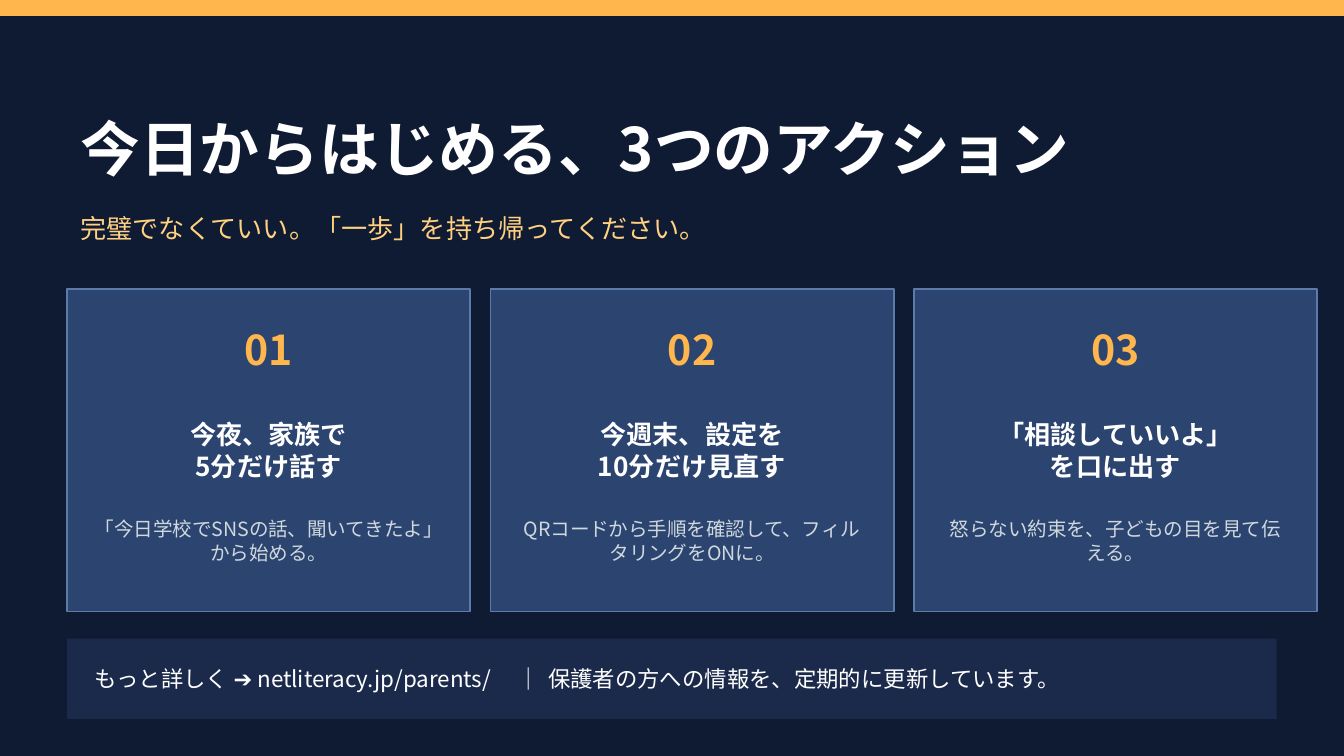
from dataclasses import dataclass

import pptx
import pptx.dml.color
import pptx.enum.shapes
import pptx.enum.text
import pptx.oxml.ns
import pptx.shapes.autoshape
import pptx.slide
import pptx.util
from lxml import etree

Cm = pptx.util.Cm
ALIGN = pptx.enum.text.PP_ALIGN
ANCHOR = pptx.enum.text.MSO_ANCHOR

FONT = "Noto Sans CJK JP"
COLORS = {
    "background": "0F1A33",
    "accent": "FFB74D",
    "subtitle": "FFD180",
    "card": "2C4470",
    "card_line": "5C7AAA",
    "detail": "CFD8DC",
    "footer": "1B2A4A",
    "white": "FFFFFF",
}
SLIDE_W, SLIDE_H = 25.4, 14.29
MARGIN = 1.27
CARD_W, CARD_H, CARD_TOP = 7.62, 6.1, 5.46
CARD_STEP = 8
CARD_PADDING = 0.51
FOOTER_TOP, FOOTER_W, FOOTER_H = 12.07, 22.86, 1.52


@dataclass(frozen=True)
class Box:
    """Position and size in centimetres."""
    left: float
    top: float
    width: float
    height: float

    def lengths(self) -> tuple[pptx.util.Length, ...]:
        return tuple(Cm(v) for v in (self.left, self.top, self.width, self.height))


@dataclass(frozen=True)
class Style:
    size: float
    color: str
    bold: bool = False
    align: ALIGN = ALIGN.LEFT
    anchor: ANCHOR = ANCHOR.MIDDLE


@dataclass(frozen=True)
class Action:
    number: str
    heading: str
    detail: str


TITLE = Style(32, "white", bold=True)
SUBTITLE = Style(14, "subtitle")
NUMBER = Style(22, "accent", bold=True, align=ALIGN.CENTER)
HEADING = Style(14, "white", bold=True, align=ALIGN.CENTER)
DETAIL = Style(10.5, "detail", align=ALIGN.CENTER, anchor=ANCHOR.TOP)
FOOTER = Style(12, "white")

ACTIONS = [
    Action("01", "今夜、家族で\n5分だけ話す", "「今日学校でSNSの話、聞いてきたよ」から始める。"),
    Action("02", "今週末、設定を\n10分だけ見直す", "QRコードから手順を確認して、フィルタリングをONに。"),
    Action("03", "「相談していいよ」\nを口に出す", "怒らない約束を、子どもの目を見て伝える。"),
]


def rgb(name: str) -> pptx.dml.color.RGBColor:
    return pptx.dml.color.RGBColor.from_string(COLORS[name])


def add_tab_stops(p, stops: tuple[float, ...]) -> None:
    tabs = etree.SubElement(p._p.get_or_add_pPr(), pptx.oxml.ns.qn("a:tabLst"))
    for stop in stops:
        etree.SubElement(tabs, pptx.oxml.ns.qn("a:tab"), pos=str(int(Cm(stop))), algn="l")


def write(s: pptx.shapes.autoshape.Shape, text: str, style: Style,
          stops: tuple[float, ...] = ()) -> None:
    tf = s.text_frame
    tf.text = text
    tf.word_wrap = True
    tf.auto_size = pptx.enum.text.MSO_AUTO_SIZE.NONE
    tf.vertical_anchor = style.anchor
    tf.margin_left = tf.margin_top = tf.margin_right = tf.margin_bottom = 0
    for p in tf.paragraphs:
        p.alignment = style.align
        if stops:
            add_tab_stops(p, stops)
        for r in p.runs:
            r.font.name = FONT
            r.font.size = pptx.util.Pt(style.size)
            r.font.bold = style.bold
            r.font.color.rgb = rgb(style.color)
            etree.SubElement(r._r.get_or_add_rPr(), pptx.oxml.ns.qn("a:ea"), typeface=FONT)


def add_text(slide: pptx.slide.Slide, box: Box, text: str, style: Style,
             stops: tuple[float, ...] = ()) -> None:
    write(slide.shapes.add_textbox(*box.lengths()), text, style, stops)


def add_panel(slide: pptx.slide.Slide, box: Box, fill: str, line: str | None = None) -> None:
    s = slide.shapes.add_shape(pptx.enum.shapes.MSO_SHAPE.RECTANGLE, *box.lengths())
    s.shadow.inherit = False
    s.fill.solid()
    s.fill.fore_color.rgb = rgb(fill)
    if line:
        s.line.color.rgb = rgb(line)
        s.line.width = pptx.util.Pt(1)
    else:
        s.line.fill.background()


def add_card(slide: pptx.slide.Slide, left: float, action: Action) -> None:
    inner_left, inner_width = left + CARD_PADDING, CARD_W - 2 * CARD_PADDING
    add_panel(slide, Box(left, CARD_TOP, CARD_W, CARD_H), "card", "card_line")
    add_text(slide, Box(left, 5.97, CARD_W, 1.27), action.number, NUMBER)
    add_text(slide, Box(inner_left, 7.49, inner_width, 2.03), action.heading, HEADING)
    add_text(slide, Box(inner_left, 9.78, inner_width, 1.52), action.detail, DETAIL)


def main() -> None:
    prs = pptx.Presentation()
    prs.slide_width, prs.slide_height = Cm(SLIDE_W), Cm(SLIDE_H)
    slide = prs.slides.add_slide(prs.slide_layouts.get_by_name("Title Only"))
    slide.background.fill.solid()
    slide.background.fill.fore_color.rgb = rgb("background")

    add_panel(slide, Box(0, 0, SLIDE_W, 0.3), "accent")

    title = slide.shapes.title
    title.left, title.top, title.width, title.height = Box(1.52, 1.78, 22.35, 2.03).lengths()
    write(title, "今日からはじめる、3つのアクション", TITLE)
    add_text(slide, Box(1.52, 3.81, 22.35, 1.02),
             "完璧でなくていい。「一歩」を持ち帰ってください。", SUBTITLE)

    for i, action in enumerate(ACTIONS):
        add_card(slide, MARGIN + i * CARD_STEP, action)

    add_panel(slide, Box(MARGIN, FOOTER_TOP, FOOTER_W, FOOTER_H), "footer")
    add_text(slide, Box(MARGIN + CARD_PADDING, FOOTER_TOP, FOOTER_W, FOOTER_H),
             "もっと詳しく ➔ netliteracy.jp/parents/\t｜\t保護者の方への情報を、定期的に更新しています。",
             FOOTER, stops=(8, 8.58))

    prs.save("out.pptx")


if __name__ == "__main__":
    main()
